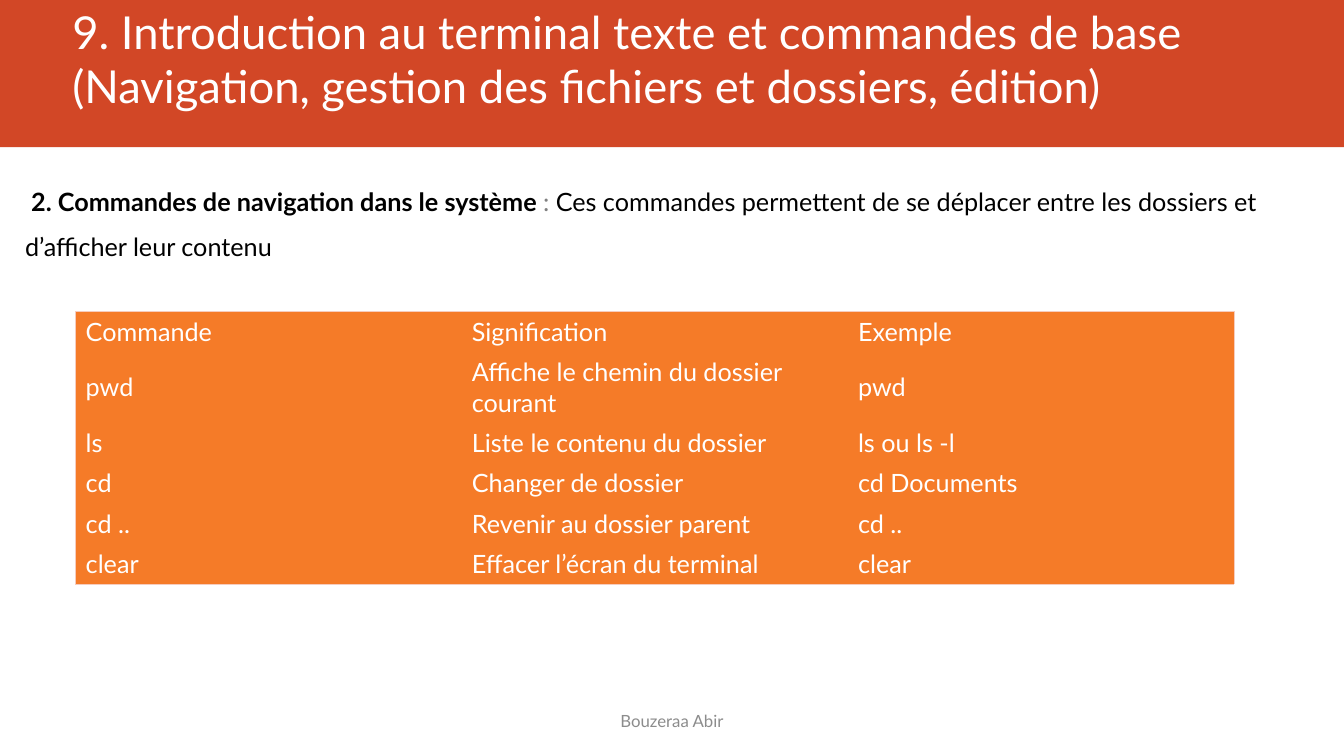
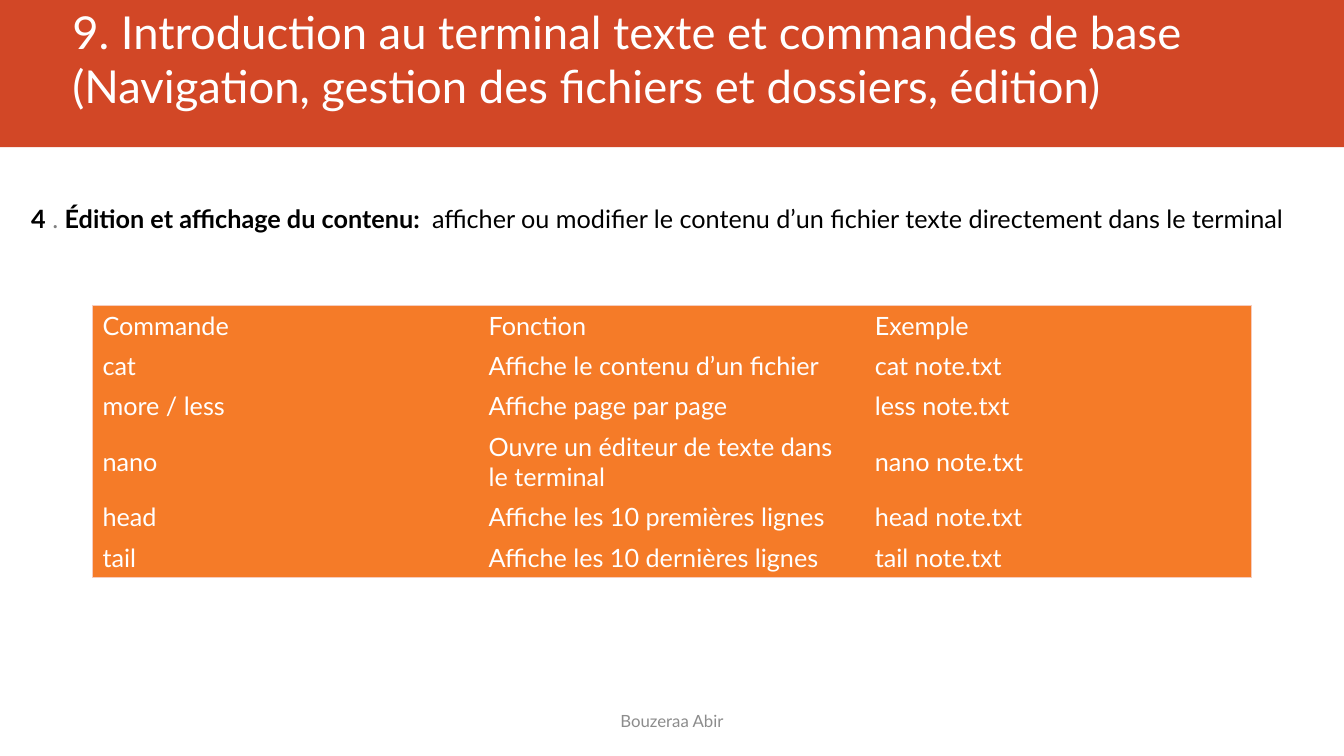
from lxml import etree
from pptx import Presentation
from pptx.dml.color import RGBColor
from pptx.enum.shapes import MSO_SHAPE
from pptx.enum.text import MSO_ANCHOR, PP_ALIGN
from pptx.oxml.ns import qn
from pptx.util import Inches, Pt

RECTANGLE = MSO_SHAPE.RECTANGLE
TOP, MIDDLE, BOTTOM = MSO_ANCHOR.TOP, MSO_ANCHOR.MIDDLE, MSO_ANCHOR.BOTTOM
LEFT, CENTER = PP_ALIGN.LEFT, PP_ALIGN.CENTER

WIDTH, HEIGHT = Inches(13.33), Inches(7.5)
FONT = "Lato"
RED, ORANGE, PINK = "D24726", "F57B28", "F6CCBE"
WHITE, BLACK, GRAY, FOOTER_GRAY = "FFFFFF", "000000", "808080", "8C8C8C"
NO_GRID_STYLE = "{2D5ABB26-0587-4C30-8999-92F81FD0307C}"
BORDER_WIDTH = Pt(0.5)
ROW_SHARE, TALL_ROW_SHARE = 5.33, 9.33

TITLE = "9. Introduction au terminal texte et commandes de base (Navigation, gestion des fichiers et dossiers, édition)"
TITLE_FORMAT = {"area": (4.65, 3.87, 88.22, 11.73), "anchor": BOTTOM, "size": 32.4,
                "paragraph": {"alignment": LEFT}}
FOOTER_FORMAT = {"area": (38.11, 92.67, 23.78, 5.33), "anchor": MIDDLE, "size": 12,
                 "paragraph": {"alignment": CENTER}}

SLIDES = [
    {
        "intro_top": 22,
        "intro": [
            (" 2. Commandes de navigation dans le système ", BLACK, True),
            (": ", GRAY, False),
            ("Ces commandes permettent de se déplacer entre les dossiers et d’afficher leur contenu", BLACK, False),
        ],
        "table_corner": (5.63, 41.2),
        "tall_row": 1,
        "rows": [
            ("Commande", "Signification", "Exemple"),
            ("pwd", "Affiche le chemin du dossier courant", "pwd"),
            ("ls", "Liste le contenu du dossier", "ls ou ls -l"),
            ("cd", "Changer de dossier", "cd Documents"),
            ("cd ..", "Revenir au dossier parent", "cd .."),
            ("clear", "Effacer l’écran du terminal", "clear"),
        ],
    },
    {
        "intro_top": 24.27,
        "intro": [
            (" 4", BLACK, True),
            (" . ", GRAY, False),
            ("Édition et affichage du contenu:  ", BLACK, True),
            ("afficher ou modifier le contenu d’un fichier texte directement dans le terminal", BLACK, False),
        ],
        "table_corner": (6.88, 40.38),
        "tall_row": 3,
        "rows": [
            ("Commande", "Fonction", "Exemple"),
            ("cat", "Affiche le contenu d’un fichier", "cat note.txt"),
            ("more / less", "Affiche page par page", "less note.txt"),
            ("nano", "Ouvre un éditeur de texte dans le terminal", "nano note.txt"),
            ("head", "Affiche les 10 premières lignes", "head note.txt"),
            ("tail", "Affiche les 10 dernières lignes", "tail note.txt"),
        ],
    },
]


def area(left, top, width, height):
    return [round(share * side / 100) for share, side in
            zip((left, top, width, height), (WIDTH, HEIGHT, WIDTH, HEIGHT))]


def write(paragraph, runs, size):
    for text, color, bold in runs:
        run = paragraph.add_run()
        run.text = text
        for name, value in {"name": FONT, "size": Pt(size), "bold": bold}.items():
            setattr(run.font, name, value)
        run.font.color.rgb = RGBColor.from_string(color)


presentation = Presentation()
presentation.slide_width, presentation.slide_height = WIDTH, HEIGHT
blank_layout = presentation.slide_layouts[6]

for content in SLIDES:
    slide = presentation.slides.add_slide(blank_layout)

    band = slide.shapes.add_shape(RECTANGLE, *area(0, 0, 100, 19.47))
    band.shadow.inherit = False
    band.fill.solid()
    band.fill.fore_color.rgb = RGBColor.from_string(RED)
    band.line.fill.background()

    intro_format = {"area": (1.13, content["intro_top"], 98.87, 14), "anchor": TOP, "size": 18,
                    "paragraph": {"alignment": LEFT, "line_spacing": 1.5}}
    for runs, style in [
        ([(TITLE, WHITE, False)], TITLE_FORMAT),
        (content["intro"], intro_format),
        ([("Bouzeraa Abir", FOOTER_GRAY, False)], FOOTER_FORMAT),
    ]:
        frame = slide.shapes.add_textbox(*area(*style["area"])).text_frame
        frame.word_wrap = True
        frame.vertical_anchor = style["anchor"]
        paragraph = frame.paragraphs[0]
        for name, value in style["paragraph"].items():
            setattr(paragraph, name, value)
        write(paragraph, runs, style["size"])

    rows = content["rows"]
    shares = [TALL_ROW_SHARE if index == content["tall_row"] else ROW_SHARE for index in range(len(rows))]
    last_row, last_column = len(rows) - 1, len(rows[0]) - 1
    table_shape = slide.shapes.add_table(len(rows), len(rows[0]),
                                         *area(*content["table_corner"], 86.2, sum(shares)))
    table = table_shape.table
    table.first_row = table.horz_banding = False
    next(table_shape._element.iter(qn("a:tableStyleId"))).text = NO_GRID_STYLE

    for row_index, (texts, share) in enumerate(zip(rows, shares)):
        table.rows[row_index].height = round(share * HEIGHT / 100)
        for column_index, text in enumerate(texts):
            cell = table.cell(row_index, column_index)
            cell.vertical_anchor = MIDDLE
            write(cell.text_frame.paragraphs[0], [(text, WHITE, False)], 18)
            edges = {"a:lnL": column_index == 0, "a:lnR": column_index == last_column,
                     "a:lnT": row_index == 0, "a:lnB": row_index == last_row}
            properties = cell._tc.get_or_add_tcPr()
            for tag, outer in edges.items():
                if outer:
                    border = etree.SubElement(properties, qn(tag), w=str(BORDER_WIDTH))
                    fill = etree.SubElement(border, qn("a:solidFill"))
                    etree.SubElement(fill, qn("a:srgbClr"), val=PINK)
            cell.fill.solid()
            cell.fill.fore_color.rgb = RGBColor.from_string(ORANGE)

presentation.save("out.pptx")
